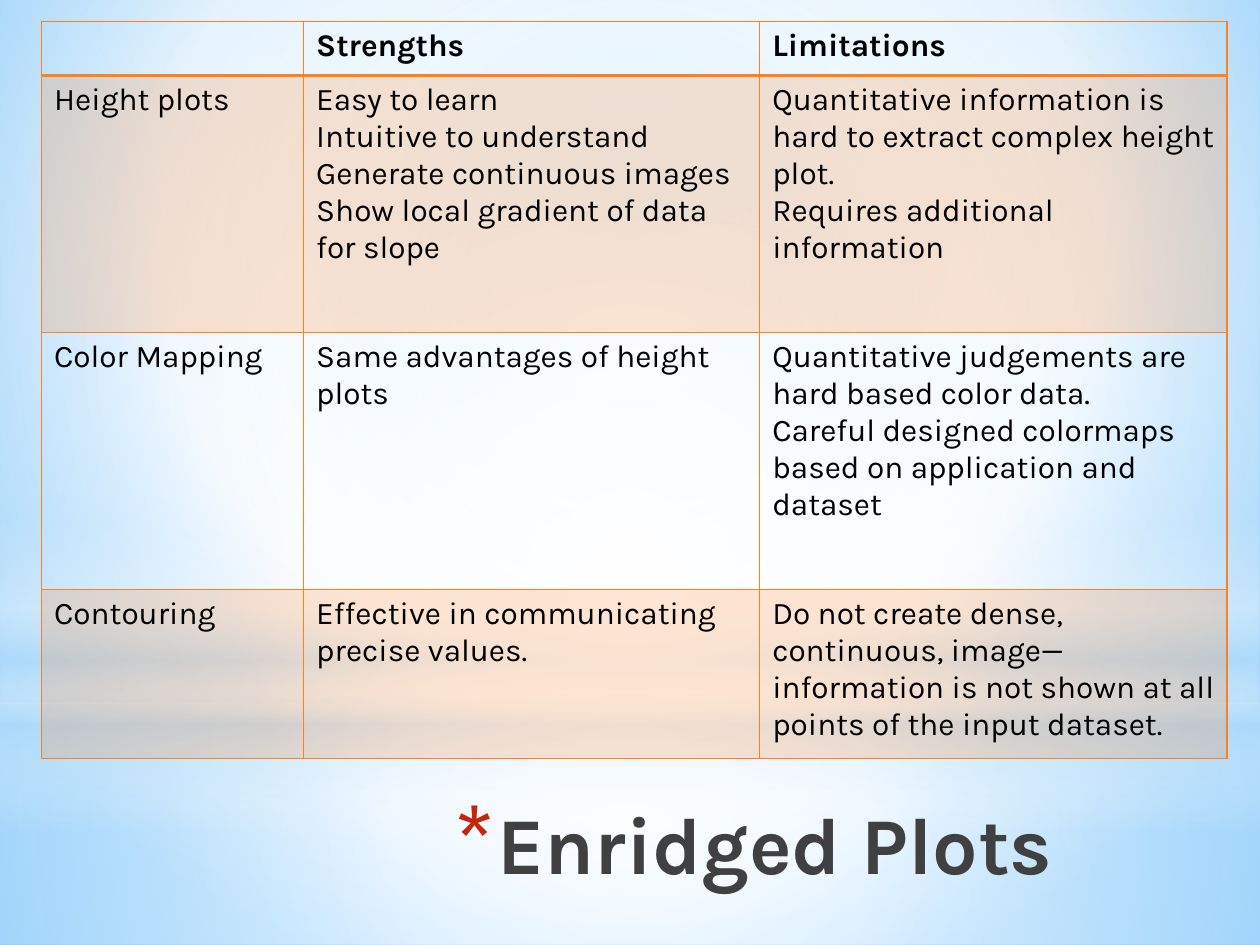
import pptx
import pptx.dml.color
import pptx.enum.shapes
import pptx.enum.text
import pptx.oxml
import pptx.oxml.ns
import pptx.util

Inches = pptx.util.Inches
Pt = pptx.util.Pt
qn = pptx.oxml.ns.qn
SHAPES = pptx.enum.shapes.MSO_SHAPE
NAMESPACE = 'xmlns:a="http://schemas.openxmlformats.org/drawingml/2006/main"'

COMPARISON = [
    ["", "Strengths", "Limitations"],
    ["Height plots",
     "Easy to learn\nIntuitive to understand\nGenerate continuous images\n"
     "Show local gradient of data for slope",
     "Quantitative information is hard to extract complex height plot.\n"
     "Requires additional information"],
    ["Color Mapping",
     "Same advantages of height plots",
     "Quantitative judgements are hard based color data.\n"
     "Careful designed colormaps based on application and dataset"],
    ["Contouring",
     "Effective in communicating precise values.",
     "Do not create dense, continuous, image—information is not shown "
     "at all points of the input dataset."],
]


def color(value):
    return pptx.dml.color.RGBColor.from_string(value)


def element(xml):
    """Parse one DrawingML element, adding its namespace."""
    name, rest = xml[1:].split(" ", 1)
    return pptx.oxml.parse_xml(f"<{name} {NAMESPACE} {rest}")


def alpha(percent):
    return f'<a:alpha val="{percent * 1000}"/>'


def set_gradient(properties, stops, center=None):
    """Replace a no-fill by a circular gradient, or a vertical one without a center."""
    stop_list = "".join(
        f'<a:gs pos="{position * 1000}"><a:srgbClr val="{value}">{alpha(opacity)}</a:srgbClr></a:gs>'
        for position, value, opacity in stops)
    if center:
        left, top, right, bottom = (edge * 1000 for edge in center)
        direction = (f'<a:path path="circle"><a:fillToRect l="{left}" t="{top}" '
                     f'r="{right}" b="{bottom}"/></a:path>')
    else:
        direction = '<a:lin ang="5400000" scaled="0"/>'
    gradient = element(f'<a:gradFill rotWithShape="1"><a:gsLst>{stop_list}</a:gsLst>'
                       f'{direction}</a:gradFill>')
    properties.replace(properties.find(qn("a:noFill")), gradient)


def write_text(frame, text, font, size, value, bold=False, align=None):
    for index, line in enumerate(text.split("\n")):
        paragraph = frame.paragraphs[0] if index == 0 else frame.add_paragraph()
        paragraph.alignment = align
        run = paragraph.add_run()
        run.text = line
        run.font.name = font
        run.font.size = Pt(size)
        run.font.bold = bold
        run.font.color.rgb = color(value)


class SlideBuilder:
    font = "Karla"
    ink = "000000"
    title_ink = "404040"
    accent = "FF8021"
    bullet = "C3260C"

    def __init__(self, slide):
        self.slide = slide

    def background(self, stops, center):
        self.slide.background.fill.background()
        set_gradient(self.slide.element.find(f".//{qn('p:bgPr')}"), stops, center)

    def glow(self, kind, top, height, stops, center=None):
        """Add a full-width translucent gradient shape."""
        shape = self.slide.shapes.add_shape(kind, 0, Inches(top), Inches(10), Inches(height))
        shape.shadow.inherit = False
        shape.fill.background()
        set_gradient(shape.element.spPr, stops, center)
        shape.line.fill.background()

    def title(self, text, left, top, width, height):
        box = self.slide.shapes.add_textbox(Inches(left), Inches(top), Inches(width), Inches(height))
        frame = box.text_frame
        frame.word_wrap = True
        frame.vertical_anchor = pptx.enum.text.MSO_ANCHOR.TOP
        write_text(frame, text, self.font, 46, self.title_ink, bold=True,
                   align=pptx.enum.text.PP_ALIGN.RIGHT)
        properties = frame.paragraphs[0]._p.get_or_add_pPr()
        properties.set("marL", str(Inches(0.35)))
        properties.set("indent", str(Inches(-0.35)))
        for xml in (f'<a:buClr ><a:srgbClr val="{self.bullet}"/></a:buClr>',
                    '<a:buSzPct val="128000"/>',
                    f'<a:buFont typeface="{self.font}"/>',
                    '<a:buChar char="*"/>'):
            properties.append(element(xml))

    def borders(self, cell, bottom):
        properties = cell._tc.get_or_add_tcPr()
        for side, width in (("L", 1), ("R", 1), ("T", 1), ("B", bottom)):
            properties.append(element(
                f'<a:ln{side} w="{Pt(width)}"><a:solidFill><a:srgbClr val="{self.accent}"/>'
                f'</a:solidFill></a:ln{side}>'))

    def table(self, rows, left, top, widths, heights):
        table = self.slide.shapes.add_table(
            len(rows), len(widths), Inches(left), Inches(top),
            Inches(sum(widths)), Inches(sum(heights))).table
        table.first_row = table.horz_banding = False
        for column, width in zip(table.columns, widths):
            column.width = Inches(width)
        for index, (row, height) in enumerate(zip(rows, heights)):
            table.rows[index].height = Inches(height)
            header = index == 0
            for cell, text in zip(table.rows[index].cells, row):
                if text:
                    write_text(cell.text_frame, text, self.font, 18, self.ink, bold=header)
                self.borders(cell, bottom=2 if header else 1)
                if index % 2:
                    self.tint(cell)
                else:
                    cell.fill.background()

    def tint(self, cell):
        cell.fill.solid()
        cell.fill.fore_color.rgb = color(self.accent)
        fill = cell._tc.tcPr.find(qn("a:solidFill"))
        fill[0].append(element('<a:alpha val="20000"/>'))


def main():
    presentation = pptx.Presentation()
    presentation.slide_width = Inches(10)
    presentation.slide_height = Inches(7.5)
    builder = SlideBuilder(presentation.slides.add_slide(presentation.slide_layouts[6]))

    white, sky = "FFFFFF", "B4DCFA"
    middle = (50, 50, 50, 50)
    builder.background([(0, "9ED5FF", 100), (60, white, 100), (100, "5BB9FF", 100)],
                       (20, 10, 20, 60))
    builder.glow(SHAPES.RECTANGLE, 5.58, 1.92,
                 [(0, white, 91), (37, white, 76), (100, sky, 79)], middle)
    builder.glow(SHAPES.RECTANGLE, 0, 5.58,
                 [(0, white, 89), (48, white, 62), (100, sky, 79)], middle)
    builder.glow(SHAPES.RECTANGLE, 4.12, 2.5,
                 [(0, white, 0), (29, white, 30), (45, sky, 40),
                  (55, white, 26), (65, sky, 60), (100, white, 0)])
    builder.glow(SHAPES.OVAL, 1.75, 5.58, [(0, white, 100), (56, white, 0)], middle)

    builder.title("Enridged Plots", 1.33, 6.25, 7.12, 1.25)
    builder.table(COMPARISON, 0.33, 0.17, (2.08, 3.62, 3.71), (0.43, 2.04, 2.04, 1.34))
    presentation.save("out.pptx")


if __name__ == "__main__":
    main()
